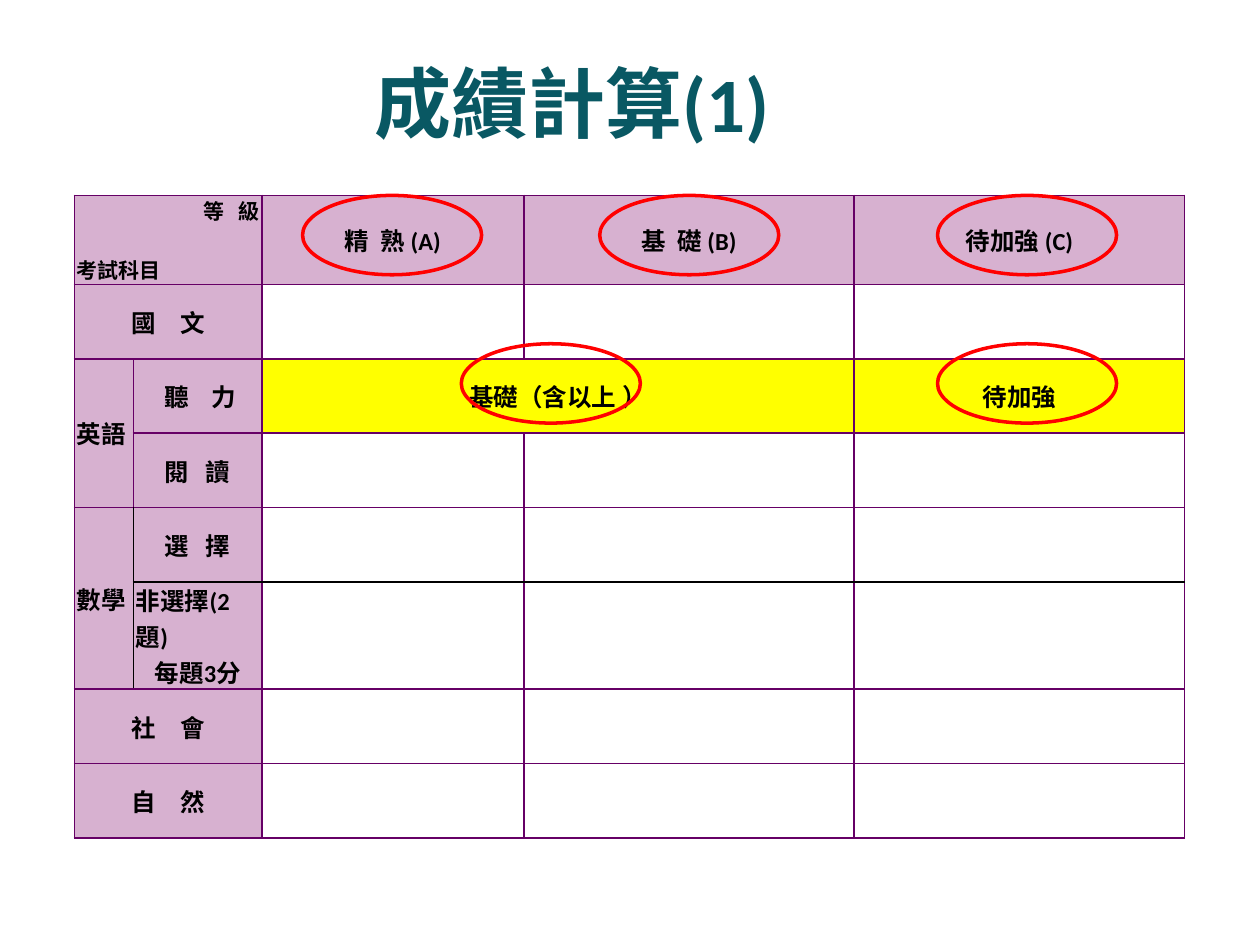
from dataclasses import dataclass

from lxml import etree
from pptx import Presentation
from pptx import util as u
from pptx.dml.color import RGBColor
from pptx.enum import shapes, text
from pptx.oxml.ns import qn

TEAL = RGBColor(0x09, 0x58, 0x63)
PURPLE = RGBColor(0x66, 0x00, 0x66)
LILAC = RGBColor(0xD7, 0xB1, 0xD0)
YELLOW = RGBColor(0xFF, 0xFF, 0x00)
RED = RGBColor(0xFF, 0x00, 0x00)
BLACK = RGBColor(0x00, 0x00, 0x00)

CENTER = text.PP_ALIGN.CENTER
LEFT = text.PP_ALIGN.LEFT
RIGHT = text.PP_ALIGN.RIGHT
JUSTIFY = text.PP_ALIGN.JUSTIFY
MIDDLE = text.MSO_ANCHOR.MIDDLE
TOP = text.MSO_ANCHOR.TOP

TABLE_LEFT, TABLE_TOP = 1.5, 3.94
COLUMN_WIDTHS = (1.19, 2.59, 5.28, 6.66, 6.66)
ROW_COUNT, ROW_HEIGHT = 8, 1.5
CHOICE_ROW, OPEN_ROW = 4, 5  # the two mathematics rows, split by black lines


@dataclass(frozen=True)
class Line:
    words: str
    align: text.PP_ALIGN = CENTER
    before: float = 0


@dataclass(frozen=True)
class Entry:
    row: int
    column: int
    lines: tuple[Line, ...]
    fill: RGBColor = LILAC
    rows: int = 1
    columns: int = 1
    size: int = 14
    anchor: text.MSO_ANCHOR = MIDDLE


@dataclass(frozen=True)
class Ring:
    left: float
    top: float


ENTRIES = (
    Entry(0, 0, (Line("等   級", RIGHT), Line("考試科目", JUSTIFY, before=16)),
          columns=2, size=12, anchor=TOP),
    Entry(0, 2, (Line("精  熟 (A)"),)),
    Entry(0, 3, (Line("基  礎 (B)"),)),
    Entry(0, 4, (Line("待加強 (C)"),)),
    Entry(1, 0, (Line("國　文"),), columns=2),
    Entry(2, 0, (Line("英語", JUSTIFY),), rows=2),
    Entry(2, 1, (Line(" 聽    力"),)),
    Entry(2, 2, (Line("基礎（含以上 ）"),), fill=YELLOW, columns=2),
    Entry(2, 4, (Line("待加強"),), fill=YELLOW),
    Entry(3, 1, (Line("閱   讀"),)),
    Entry(4, 0, (Line("數學", JUSTIFY),), rows=2),
    Entry(4, 1, (Line("選   擇"),)),
    Entry(5, 1, (Line("非選擇(2題)", LEFT), Line("每題3分"))),
    Entry(6, 0, (Line("社　會"),), columns=2),
    Entry(7, 0, (Line("自　然"),), columns=2),
)

HEADER_TOP, LISTENING_TOP = 3.94, 6.93
RINGS = (
    Ring(6.1, HEADER_TOP),
    Ring(12.09, HEADER_TOP),
    Ring(18.9, HEADER_TOP),
    Ring(9.3, LISTENING_TOP),
    Ring(18.9, LISTENING_TOP),
)


def set_all(target, values: dict) -> None:
    for name, value in values.items():
        setattr(target, name, value)


def style_font(font, size: int, color: RGBColor) -> None:
    set_all(font, {"name": "Calibri", "size": u.Pt(size), "bold": True})
    font.color.rgb = color


def add_borders(cell, row: int, column: int) -> None:
    in_math = row in (CHOICE_ROW, OPEN_ROW)
    black_edges = {
        "L": in_math and column == 1,
        "R": in_math and column == 0,
        "T": row == OPEN_ROW and column > 0,
        "B": row == CHOICE_ROW and column > 0,
    }
    properties = cell._tc.get_or_add_tcPr()
    for side, is_black in black_edges.items():
        edge = etree.SubElement(properties, qn(f"a:ln{side}"), w=str(u.Pt(1)))
        paint = etree.SubElement(edge, qn("a:solidFill"))
        etree.SubElement(paint, qn("a:srgbClr"), val=str(BLACK if is_black else PURPLE))


def fill_entry(table, entry: Entry) -> None:
    cell = table.cell(entry.row, entry.column)
    if entry.rows * entry.columns > 1:
        cell.merge(table.cell(entry.row + entry.rows - 1,
                              entry.column + entry.columns - 1))
    set_all(cell, {
        "margin_left": u.Cm(0.05), "margin_right": u.Cm(0.05),
        "margin_top": 0, "margin_bottom": 0,
        "vertical_anchor": entry.anchor,
    })
    cell.fill.solid()
    cell.fill.fore_color.rgb = entry.fill
    for index, line in enumerate(entry.lines):
        frame = cell.text_frame
        para = frame.add_paragraph() if index else frame.paragraphs[0]
        para.alignment = line.align
        if line.before:
            para.space_before = u.Pt(line.before)
        span = para.add_run()
        span.text = line.words
        style_font(span.font, entry.size, BLACK)


def add_grade_table(page) -> None:
    frame = page.shapes.add_table(
        ROW_COUNT, len(COLUMN_WIDTHS), u.Cm(TABLE_LEFT), u.Cm(TABLE_TOP),
        u.Cm(sum(COLUMN_WIDTHS)), u.Cm(ROW_COUNT * ROW_HEIGHT))
    table = frame.table
    set_all(table, {"first_row": False, "horz_banding": False})
    for column, width in zip(table.columns, COLUMN_WIDTHS):
        column.width = u.Cm(width)
    for row_index, row in enumerate(table.rows):
        row.height = u.Cm(ROW_HEIGHT)
        for column_index, cell in enumerate(row.cells):
            add_borders(cell, row_index, column_index)
            cell.fill.background()
    for entry in ENTRIES:
        fill_entry(table, entry)


def add_ring(page, ring: Ring) -> None:
    oval = page.shapes.add_shape(shapes.MSO_SHAPE.OVAL, u.Cm(ring.left),
                                 u.Cm(ring.top), u.Cm(3.61), u.Cm(1.6))
    oval.shadow.inherit = False
    oval.fill.background()
    oval.line.color.rgb = RED
    oval.line.width = u.Pt(2)


def add_title(page) -> None:
    title = page.shapes.title
    set_all(title, {"left": u.Cm(1.3), "top": u.Cm(0.46),
                    "width": u.Cm(20.47), "height": u.Cm(3.18)})
    title.text_frame.vertical_anchor = MIDDLE
    para = title.text_frame.paragraphs[0]
    para.alignment = CENTER
    span = para.add_run()
    span.text = "成績計算(1)"
    style_font(span.font, 44, TEAL)


def main() -> None:
    deck = Presentation()
    set_all(deck, {"slide_width": u.Cm(25.4), "slide_height": u.Cm(19.05)})
    page = deck.slides.add_slide(deck.slide_layouts[5])

    # Heading, grade table, then the rings around the grades
    add_title(page)
    add_grade_table(page)
    for ring in RINGS:
        add_ring(page, ring)
    deck.save("out.pptx")


if __name__ == "__main__":
    main()
